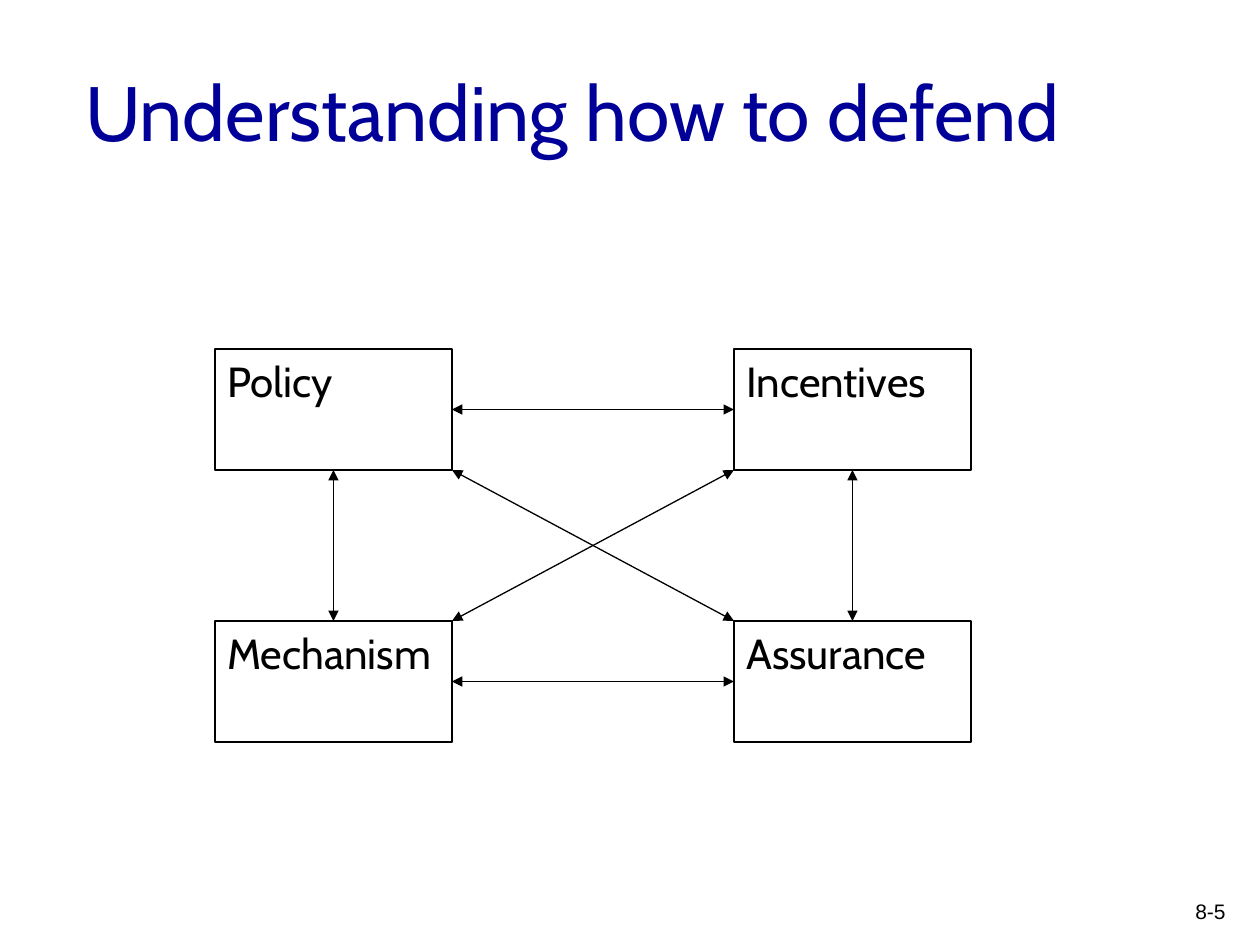
from lxml.etree import SubElement
from pptx import Presentation
from pptx.dml.color import RGBColor
from pptx.enum.shapes import MSO_CONNECTOR as Line, MSO_SHAPE as Shape
from pptx.enum.text import MSO_ANCHOR as Anchor, PP_ALIGN as Align
from pptx.oxml.ns import qn
from pptx.util import Emu, Pt

PX_PER_INCH = 126
COLORS = {"title": "000099", "ink": "000000"}
TOP, LEFT, BOTTOM, RIGHT = range(4)


def px(length):
    """Turn pixels into EMU."""
    return Emu(round(length * 914400 / PX_PER_INCH))


def color(key):
    """Look up a named colour."""
    return RGBColor.from_string(COLORS[key])


def write(holder, wording, size, font="Cabin", ink="ink", align=Align.LEFT, anchor=Anchor.TOP):
    """Write one formatted paragraph into a shape."""
    frame = holder.text_frame
    frame.text = wording
    frame.word_wrap = True
    frame.vertical_anchor = anchor
    paragraph = frame.paragraphs[0]
    paragraph.alignment = align
    face = paragraph.runs[0].font
    face.name, face.size = font, Pt(size)
    face.color.rgb = color(ink)


def add_label(slide, box, wording, size, **style):
    """Place a text box in the given box."""
    write(slide.shapes.add_textbox(*map(px, box)), wording, size, **style)


def add_concept(slide, box, wording):
    """Place an outlined rectangle with its concept."""
    concept = slide.shapes.add_shape(Shape.RECTANGLE, *map(px, box))
    concept.shadow.inherit = False
    concept.fill.background()
    concept.line.color.rgb = color("ink")
    concept.line.width = Pt(0.75)
    write(concept, wording, 24)
    return concept


def add_arrow(slide, start, end):
    """Draw a double-headed arrow between two EMU points."""
    arrow = slide.shapes.add_connector(Line.STRAIGHT, *start, *end)
    arrow.line.color.rgb = color("ink")
    arrow.line.width = Pt(0.75)
    outline = arrow.line._get_or_add_ln()
    for tip in ("a:headEnd", "a:tailEnd"):
        SubElement(outline, qn(tip), type="triangle")
    SubElement(outline.getparent(), qn("a:effectLst"))
    return arrow


def link(slide, source, source_side, target, target_side):
    """Join the side midpoints of two concepts."""
    arrow = add_arrow(slide, (0, 0), (0, 0))
    arrow.begin_connect(source, source_side)
    arrow.end_connect(target, target_side)


def add_defence_map(slide, box):
    """Place four concepts at the corners of the box and link every pair."""
    left, top, width, height = box
    concept_width, concept_height = 237, 121
    right, bottom = left + width - concept_width, top + height - concept_height
    corners = {
        "Policy": (left, top),
        "Incentives": (right, top),
        "Assurance": (right, bottom),
        "Mechanism": (left, bottom),
    }
    policy, incentives, assurance, mechanism = [
        add_concept(slide, (*corner, concept_width, concept_height), wording)
        for wording, corner in corners.items()
    ]
    link(slide, policy, RIGHT, incentives, LEFT)
    link(slide, assurance, TOP, incentives, BOTTOM)
    link(slide, mechanism, RIGHT, assurance, LEFT)
    link(slide, mechanism, TOP, policy, BOTTOM)

    inner_left, inner_right = policy.left + policy.width, incentives.left
    inner_top, inner_bottom = policy.top + policy.height, mechanism.top
    add_arrow(slide, (inner_right, inner_bottom), (inner_left, inner_top))
    add_arrow(slide, (inner_left, inner_bottom), (inner_right, inner_top))


def main():
    """Build and save the slide."""
    deck = Presentation()
    deck.slide_width, deck.slide_height = px(1260), px(945)
    slide = deck.slides.add_slide(deck.slide_layouts[6])
    add_label(slide, (1145, 892, 93, 42), "8-5", 12, font="Arial", align=Align.RIGHT)
    add_label(slide, (73, 32, 1071, 158), "Understanding how to defend", 44,
              ink="title", anchor=Anchor.MIDDLE)
    add_defence_map(slide, (215, 349, 756, 393))
    deck.save("out.pptx")


if __name__ == "__main__":
    main()
